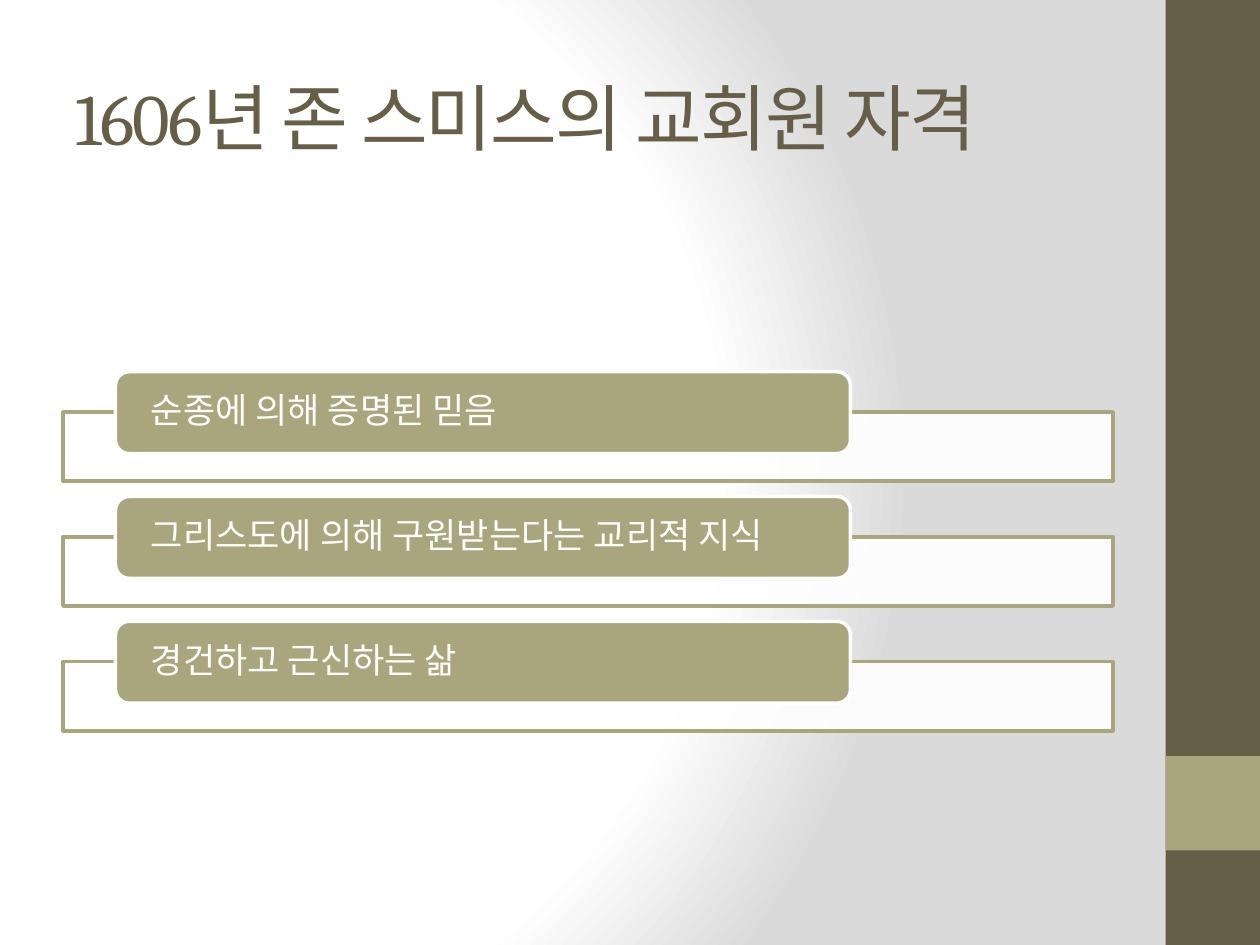
from pptx import Presentation
from pptx.dml.color import RGBColor
from pptx.enum.shapes import MSO_SHAPE
from pptx.enum.text import MSO_ANCHOR, MSO_AUTO_SIZE, PP_ALIGN
from pptx.oxml import parse_xml
from pptx.oxml.ns import nsdecls, qn
from pptx.util import Pt

RECTANGLE, ROUNDED = MSO_SHAPE.RECTANGLE, MSO_SHAPE.ROUNDED_RECTANGLE
MIDDLE, LEFT, NO_FIT = MSO_ANCHOR.MIDDLE, PP_ALIGN.LEFT, MSO_AUTO_SIZE.NONE

THEME = {
    "dark": "675E47", "accent": "A9A57C", "light": "FFFFFF", "edge": "DADADA",
    "title_font": "Cambria", "body_font": "Calibri",
    "title_size": 41.4, "body_size": 20,
}
QUALIFICATIONS = [
    "순종에 의해 증명된 믿음",
    "그리스도에 의해 구원받는다는 교리적 지식",
    "경건하고 근신하는 삶",
]


def add_box(kind, left, top, width, height, fill, line=None):
    shape = slide.shapes.add_shape(kind, Pt(left), Pt(top), Pt(width), Pt(height))
    shape.shadow.inherit = False
    shape.fill.solid()
    shape.fill.fore_color.rgb = RGBColor.from_string(THEME[fill])
    if line:
        shape.line.color.rgb = RGBColor.from_string(THEME[line])
        shape.line.width = Pt(2)
    else:
        shape.line.fill.background()
    return shape


def write_text(shape, text, font, size, color, inset, inset_y):
    frame = shape.text_frame
    frame.text = text
    frame_format = {
        "word_wrap": True, "auto_size": NO_FIT, "vertical_anchor": MIDDLE,
        "margin_left": Pt(inset), "margin_right": Pt(inset),
        "margin_top": Pt(inset_y), "margin_bottom": Pt(inset_y),
    }
    for name, value in frame_format.items():
        setattr(frame, name, value)
    paragraph = frame.paragraphs[0]
    paragraph.alignment = LEFT
    run = paragraph.runs[0]
    run.font.name = THEME[font]
    run.font.size = Pt(THEME[size])
    run.font.color.rgb = RGBColor.from_string(THEME[color])
    return paragraph, run


presentation = Presentation()
presentation.slide_width, presentation.slide_height = Pt(720), Pt(540)
slide = presentation.slides.add_slide(presentation.slide_layouts[5])

# Background: white centre fading to grey along a circle
slide.background.fill.solid()
background = slide.element.find(".//" + qn("p:bgPr"))
stops = "".join(
    f'<a:gs pos="{position * 1000}"><a:srgbClr val="{THEME[color]}"/></a:gs>'
    for position, color in [(0, "light"), (75, "light"), (100, "edge")]
)
background.replace(background[0], parse_xml(
    f'<a:gradFill {nsdecls("a")} rotWithShape="1"><a:gsLst>{stops}</a:gsLst>'
    '<a:path path="circle"><a:fillToRect l="20000" t="50000" r="100000" b="50000"/>'
    "</a:path></a:gradFill>"
))

# Side band
add_box(RECTANGLE, 666, 0, 54, 540, "dark")
add_box(RECTANGLE, 666, 432, 54, 54, "accent")

# Title
title = slide.shapes.title
title_place = {"left": 36, "top": 21.6, "width": 600, "height": 90}
for name, value in title_place.items():
    setattr(title, name, Pt(value))
paragraph, run = write_text(title, "1606년 존 스미스의 교회원 자격",
                            "title_font", "title_size", "dark", 7.2, 3.6)
run.font._element.set("spc", "-100")

# Qualifications: an open frame with a label over its top edge
FIRST_TOP, PITCH = 212.4, 71.3
for index, text in enumerate(QUALIFICATIONS):
    top = FIRST_TOP + index * PITCH
    frame_box = add_box(RECTANGLE, 36, top + 23, 600, 39.6, "light", "accent")
    color = frame_box.fill._xPr.find(".//" + qn("a:srgbClr"))
    color.append(parse_xml(f'<a:alpha {nsdecls("a")} val="90000"/>'))

    label = add_box(ROUNDED, 66, top, 420, 46.8, "accent", "light")
    paragraph, run = write_text(label, text, "body_font", "body_size", "light", 18, 0)
    paragraph.line_spacing = 0.9

presentation.save("out.pptx")
